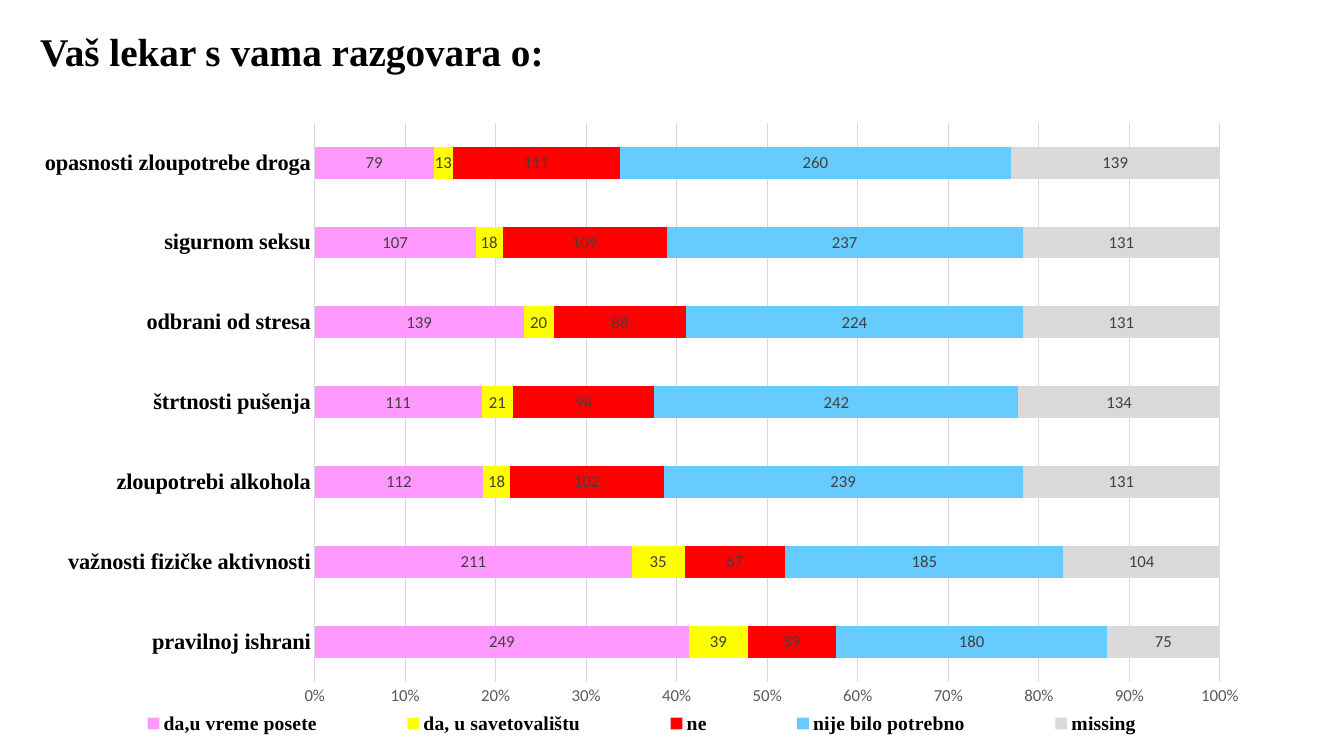
from lxml.etree import SubElement
from pptx import Presentation
from pptx.chart.data import CategoryChartData
from pptx.dml.color import RGBColor
from pptx.enum.chart import (XL_CHART_TYPE, XL_LABEL_POSITION,
                             XL_LEGEND_POSITION, XL_TICK_MARK)
from pptx.enum.text import MSO_ANCHOR
from pptx.oxml.ns import qn
from pptx.util import Inches, Pt

SERIF, SANS = "Times New Roman", "Calibri"
GRID_GRAY = "D9D9D9"

TOPICS = ["pravilnoj ishrani", "važnosti fizičke aktivnosti",
          "zloupotrebi alkohola", "štrtnosti pušenja", "odbrani od stresa",
          "sigurnom seksu", "opasnosti zloupotrebe droga"]
ANSWERS = [
    ("da,u vreme posete", "FF99FF", [249, 211, 112, 111, 139, 107, 79]),
    ("da, u savetovalištu", "FFFF00", [39, 35, 18, 21, 20, 18, 13]),
    ("ne", "FF0000", [59, 67, 102, 94, 88, 109, 111]),
    ("nije bilo potrebno", "66CCFF", [180, 185, 239, 242, 224, 237, 260]),
    ("missing", "D9D9D9", [75, 104, 131, 134, 131, 131, 139]),
]


def color(value):
    return RGBColor.from_string(value)


def apply(target, **values):
    for name, value in values.items():
        setattr(target, name, value)


def set_font(font, size, fill="000000", name=SERIF, bold=True):
    apply(font, size=Pt(size), name=name, bold=bold)
    font.color.rgb = color(fill)


def set_line(line, fill=GRID_GRAY):
    line.width = Pt(0.75)
    line.color.rgb = color(fill)


def set_layout(parent, position, inner, **box):
    """Place a chart part by shares of the chart's size."""
    for old in parent.findall(qn("c:layout")):
        parent.remove(old)
    layout = SubElement(parent, qn("c:layout"))
    parent.insert(position, layout)
    manual = SubElement(layout, qn("c:manualLayout"))
    settings = {"layoutTarget": "inner"} if inner else {}
    settings.update(xMode="edge", yMode="edge", **box)
    for name, value in settings.items():
        SubElement(manual, qn(f"c:{name}")).set("val", str(value))


class SlideBuilder:
    """Places elements in inches on a slide."""

    def __init__(self, presentation):
        self.slide = presentation.slides.add_slide(presentation.slide_layouts[6])

    def title(self, text, *box):
        shape = self.slide.shapes.add_textbox(*map(Inches, box))
        apply(shape.text_frame, word_wrap=True, vertical_anchor=MSO_ANCHOR.MIDDLE)
        paragraph = shape.text_frame.paragraphs[0]
        paragraph.line_spacing = 0.9
        run = paragraph.add_run()
        run.text = text
        set_font(run.font, 28)

    def stacked_bars(self, categories, series_rows, *box):
        data = CategoryChartData(number_format="General")
        data.categories = categories
        for name, _, values in series_rows:
            data.add_series(name, values)
        chart = self.slide.shapes.add_chart(
            XL_CHART_TYPE.BAR_STACKED_100, *map(Inches, box), data).chart
        apply(chart, has_title=False, has_legend=True)
        set_font(chart.font, 10, name=SANS, bold=False)

        # Bars and their values
        plot = chart.plots[0]
        apply(plot, gap_width=150, overlap=100, vary_by_categories=False)
        for series, (_, fill, _) in zip(plot.series, series_rows):
            series.format.fill.solid()
            series.format.fill.fore_color.rgb = color(fill)
            labels = series.data_labels
            apply(labels, show_value=True, position=XL_LABEL_POSITION.CENTER)
            set_font(labels.font, 12, "404040", SANS, False)

        # Axes
        for axis in (chart.category_axis, chart.value_axis):
            apply(axis, major_tick_mark=XL_TICK_MARK.NONE,
                  minor_tick_mark=XL_TICK_MARK.NONE)
        set_font(chart.category_axis.tick_labels.font, 16)
        set_line(chart.category_axis.format.line)
        value_axis = chart.value_axis
        apply(value_axis, minimum_scale=0, maximum_scale=1, major_unit=0.1,
              has_major_gridlines=True)
        apply(value_axis.tick_labels, number_format="0%",
              number_format_is_linked=False)
        set_font(value_axis.tick_labels.font, 12, "595959", SANS, False)
        value_axis.format.line.fill.background()
        set_line(value_axis.major_gridlines.format.line)

        # Legend and placement
        apply(chart.legend, position=XL_LEGEND_POSITION.BOTTOM,
              include_in_layout=False)
        set_font(chart.legend.font, 14)
        chart_element = chart.element.find(qn("c:chart"))
        set_layout(chart_element.find(qn("c:plotArea")), 0, True,
                   x=0.237, y=0.02, w=0.728, h=0.865)
        set_layout(chart_element.find(qn("c:legend")), 1, False,
                   x=0.035, y=0.92, w=0.93, h=0.06)


def main():
    presentation = Presentation()
    apply(presentation, slide_width=Inches(13.33), slide_height=Inches(7.5))
    builder = SlideBuilder(presentation)
    builder.title("Vaš lekar s vama razgovara o:", 0.3, 0, 11.64, 1.06)
    builder.stacked_bars(TOPICS, ANSWERS, 0.2, 1.09, 12.33, 6.41)
    presentation.save("out.pptx")


if __name__ == "__main__":
    main()
